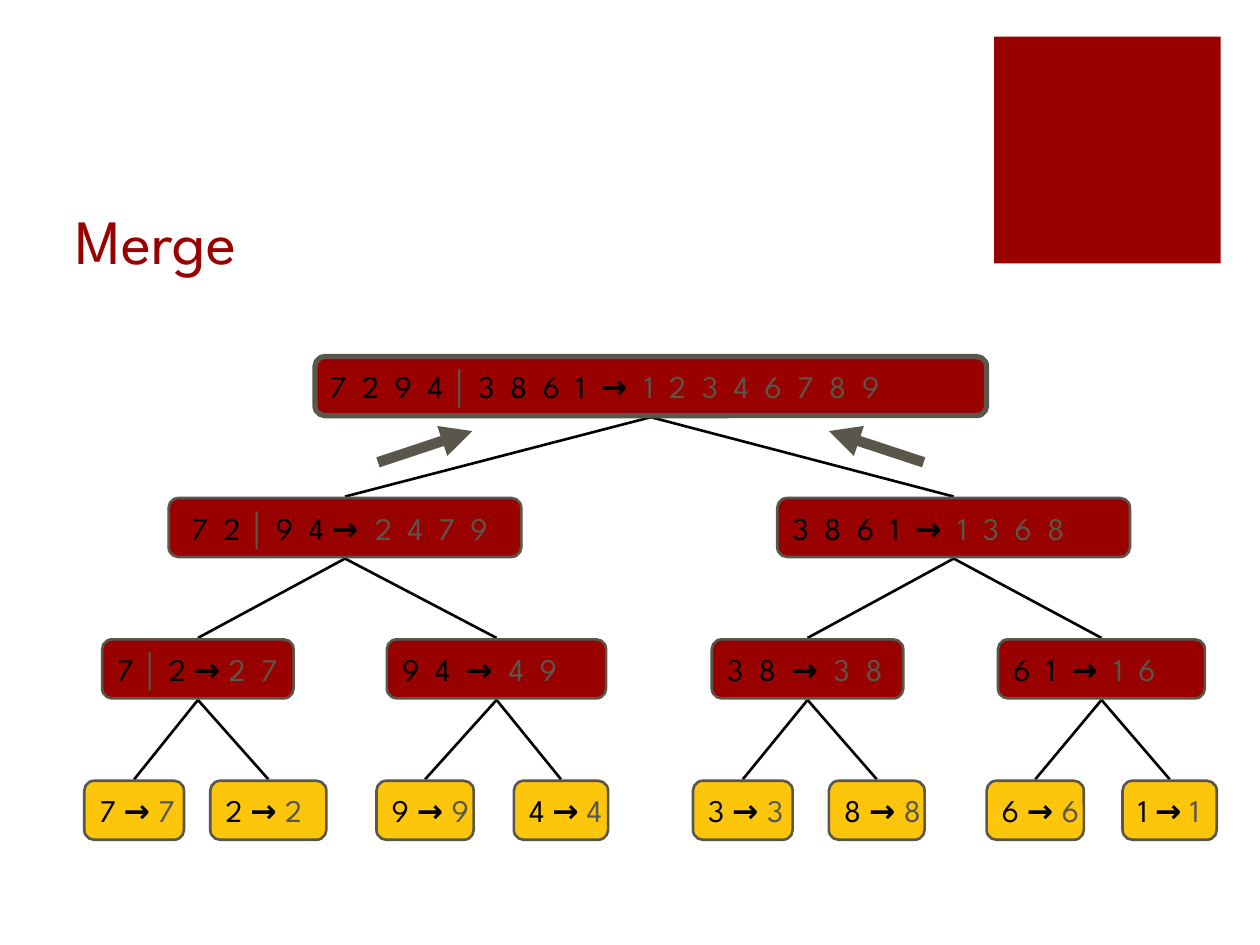
from lxml import etree
from pptx import Presentation
from pptx.dml.color import RGBColor
from pptx.enum.shapes import MSO_CONNECTOR, MSO_SHAPE
from pptx.enum.text import MSO_ANCHOR, PP_ALIGN
from pptx.oxml.ns import qn
from pptx.util import Cm, Pt

FONT = "League Spartan"
RED, YELLOW, GRAY, BLACK = "990000", "FEC60B", "59564B", "000000"

# Merge tree by level, in cm: left, width, unsorted part, arrow, sorted part
LEVELS = [
    [(6.35, 13.54, "7  2  9  4 │ 3  8  6  1  ", "→  ", "1  2  3  4  6  7  8  9")],
    [(3.4, 7.11, " 7  2 │ 9  4 ", "→  ", "2  4  7  9"),
     (15.67, 7.11, "3  8  6  1  ", "→ ", " 1  3  6  8")],
    [(2.06, 3.86, "7 │ 2 ", "→ ", "2  7"),
     (7.8, 4.42, "9  4  ", "→ ", " 4  9"),
     (14.35, 3.86, "3  8  ", "→", "  3  8"),
     (20.12, 4.17, "6  1  ", "→", "  1  6")],
    [(1.7, 2.01, "7 ", "→ ", "7"), (4.24, 2.34, "2 ", "→ ", "2"),
     (7.59, 1.96, "9 ", "→ ", "9"), (10.36, 1.9, "4 ", "→", " 4"),
     (13.97, 2.01, "3 ", "→ ", "3"), (16.71, 1.93, "8 ", "→ ", "8"),
     (19.89, 1.96, "6 ", "→ ", "6"), (22.63, 1.9, "1 ", "→ ", "1")],
]
# Upward arrows beside the root: start and end points, in cm
MERGE_ARROWS = [((7.62, 9.32), (9.52, 8.69)), ((18.62, 9.32), (16.71, 8.69))]

TREE_TOP, LEVEL_STEP, NODE_HEIGHT = 7.19, 2.85, 1.19
LINE_GAP = 0.03


def color(value):
    return RGBColor.from_string(value)


def add_box(slide, kind, left, top, width, height, fill):
    shape = slide.shapes.add_shape(kind, Cm(left), Cm(top), Cm(width), Cm(height))
    shape.shadow.inherit = False
    shape.fill.solid()
    shape.fill.fore_color.rgb = color(fill)
    return shape


def add_line(slide, start, end, line_color, width, arrow=False):
    points = [Cm(value) for value in (*start, *end)]
    connector = slide.shapes.add_connector(MSO_CONNECTOR.STRAIGHT, *points)
    connector.line.color.rgb = color(line_color)
    connector.line.width = Pt(width)
    if arrow:
        line = connector.line._get_or_add_ln()
        etree.SubElement(line, qn("a:tailEnd"), type="triangle")
    etree.SubElement(connector._element.spPr, qn("a:effectLst"))


def add_run(paragraph, text, text_color=BLACK, bold=False, font=FONT):
    run = paragraph.add_run()
    run.text = text
    run.font.name = font
    run.font.bold = bold
    run.font.color.rgb = color(text_color)


def add_node(slide, depth, left, width, unsorted, arrow, result):
    fill = YELLOW if depth == len(LEVELS) - 1 else RED
    shape = add_box(slide, MSO_SHAPE.ROUNDED_RECTANGLE, left,
                    TREE_TOP + depth * LEVEL_STEP, width, NODE_HEIGHT, fill)
    shape.line.color.rgb = color(GRAY)
    shape.line.width = Pt(1.5 if depth else 3)
    frame = shape.text_frame
    frame.word_wrap = True
    frame.margin_right = 0
    frame.vertical_anchor = MSO_ANCHOR.MIDDLE
    paragraph = frame.paragraphs[0]
    paragraph.alignment = PP_ALIGN.LEFT
    paragraph.font.size = Pt(18)
    first, divider, second = unsorted.partition("│")
    add_run(paragraph, first)
    if divider:
        add_run(paragraph, divider, GRAY, True, "Arial")
        add_run(paragraph, second)
    add_run(paragraph, arrow, bold=True)
    add_run(paragraph, result, GRAY)


def main():
    presentation = Presentation()
    presentation.slide_width, presentation.slide_height = Cm(25.4), Cm(19.05)
    slide = presentation.slides.add_slide(presentation.slide_layouts[5])

    # Corner square and title
    square = add_box(slide, MSO_SHAPE.RECTANGLE, 20.04, 0.74, 4.57, 4.57, RED)
    square.line.fill.background()
    title = slide.shapes.title
    title.left, title.top, title.width, title.height = Cm(1.27), Cm(2.54), Cm(18.08), Cm(3.18)
    title.text_frame.text = "Merge"
    title.text_frame.vertical_anchor = MSO_ANCHOR.BOTTOM
    paragraph = title.text_frame.paragraphs[0]
    paragraph.alignment = PP_ALIGN.LEFT
    paragraph.font.name = FONT
    paragraph.font.size = Pt(36)
    paragraph.font.color.rgb = color(RED)

    # Branches from each node to its parent
    for depth in range(1, len(LEVELS)):
        child_top = TREE_TOP + depth * LEVEL_STEP - LINE_GAP
        parent_bottom = TREE_TOP + (depth - 1) * LEVEL_STEP + NODE_HEIGHT + LINE_GAP
        for index, (left, width, *_) in enumerate(LEVELS[depth]):
            parent_left, parent_width, *_ = LEVELS[depth - 1][index // 2]
            add_line(slide, (left + width / 2, child_top),
                     (parent_left + parent_width / 2, parent_bottom), BLACK, 1.5)

    # Nodes
    for depth, level in enumerate(LEVELS):
        for node in level:
            add_node(slide, depth, *node)

    # Merge arrows
    for start, end in MERGE_ARROWS:
        add_line(slide, start, end, GRAY, 6, arrow=True)

    presentation.save("out.pptx")


if __name__ == "__main__":
    main()
